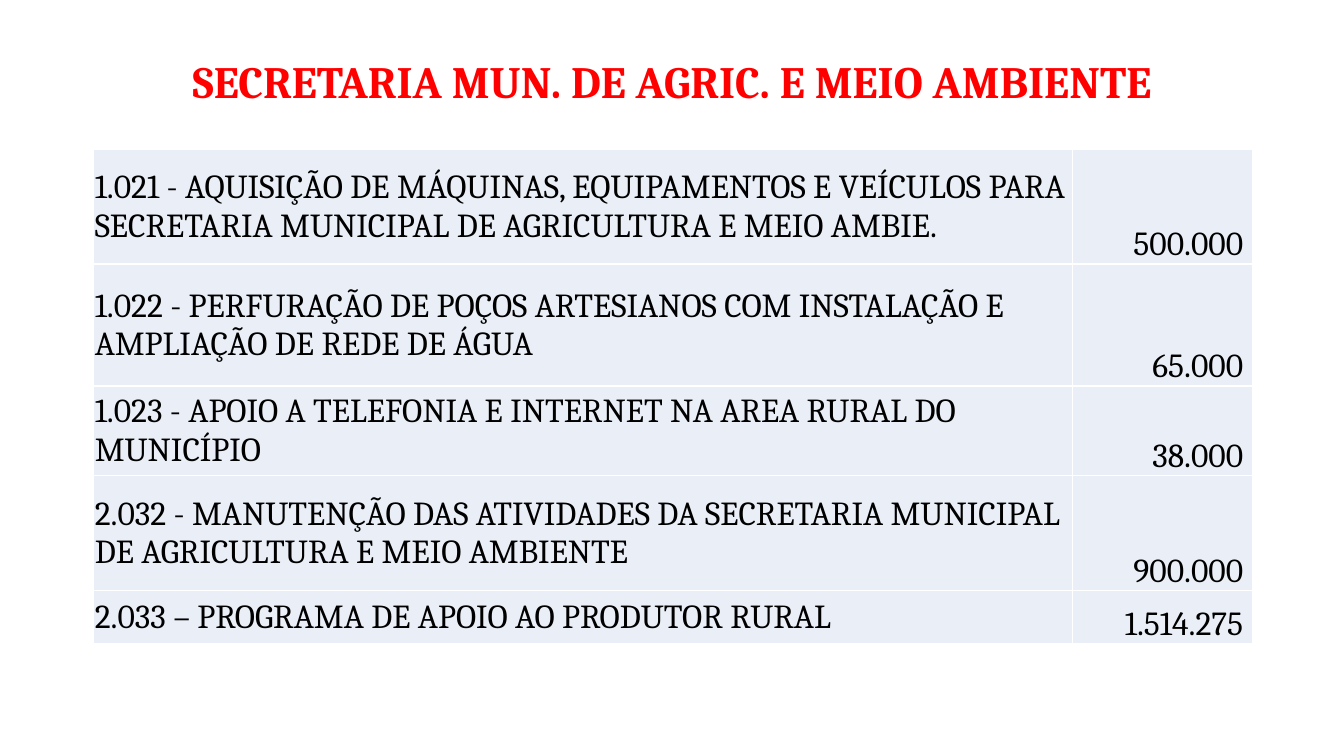
from lxml import etree
from pptx import Presentation
from pptx import util as u
from pptx.dml.color import RGBColor
from pptx.enum import text
from pptx.oxml import ns

RED = RGBColor(0xFF, 0x00, 0x00)
BLACK = RGBColor(0x00, 0x00, 0x00)
WHITE = RGBColor(0xFF, 0xFF, 0xFF)
PALE_BLUE = RGBColor(0xEA, 0xEF, 0xF7)

BUDGET_ROWS = [
    (1.14, "1.021 - AQUISIÇÃO DE MÁQUINAS, EQUIPAMENTOS E VEÍCULOS PARA "
           "SECRETARIA MUNICIPAL DE AGRICULTURA E MEIO AMBIE.", "500.000"),
    (1.21, "1.022 - PERFURAÇÃO DE POÇOS ARTESIANOS COM INSTALAÇÃO E "
           "AMPLIAÇÃO DE REDE DE ÁGUA", "65.000"),
    (0.89, "1.023 - APOIO A TELEFONIA E INTERNET NA AREA RURAL DO MUNICÍPIO",
     "38.000"),
    (1.14, "2.032 - MANUTENÇÃO DAS ATIVIDADES DA SECRETARIA MUNICIPAL DE "
           "AGRICULTURA E MEIO AMBIENTE", "900.000"),
    (0.53, "2.033 – PROGRAMA DE APOIO AO PRODUTOR RURAL", "1.514.275"),
]


def write_text(frame, words, size=24, color=BLACK, bold=False,
               align=text.PP_ALIGN.LEFT, line_spacing=None):
    paragraph = frame.paragraphs[0]
    paragraph.alignment = align
    if line_spacing:
        paragraph.line_spacing = line_spacing
    run = paragraph.add_run()
    run.text = words
    run.font.name = "Cambria"
    run.font.size = u.Pt(size)
    run.font.bold = bold
    run.font.color.rgb = color


class BudgetSlide:
    def __init__(self, presentation):
        self.border_color = WHITE
        self.border_width = u.Pt(1)
        self.cell_fill = PALE_BLUE
        self.slide = presentation.slides.add_slide(presentation.slide_layouts[5])

    def title(self, words, left, top, width, height):
        shape = self.slide.shapes.title
        shape.left, shape.top = u.Inches(left), u.Inches(top)
        shape.width, shape.height = u.Inches(width), u.Inches(height)
        frame = shape.text_frame
        frame.word_wrap = True
        frame.auto_size = text.MSO_AUTO_SIZE.NONE
        frame.vertical_anchor = text.MSO_ANCHOR.MIDDLE
        write_text(frame, words, size=32, color=RED, bold=True,
                   align=text.PP_ALIGN.CENTER, line_spacing=0.9)

    def table(self, rows, left, top, column_widths):
        heights = [row[0] for row in rows]
        table = self.slide.shapes.add_table(
            len(rows), len(column_widths), u.Inches(left), u.Inches(top),
            u.Inches(sum(column_widths)), u.Inches(sum(heights))).table
        table.first_row = table.horz_banding = False
        for column, width in zip(table.columns, column_widths):
            column.width = u.Inches(width)
        for index, (height, item, amount) in enumerate(rows):
            table.rows[index].height = u.Inches(height)
            self.cell(table.cell(index, 0), item)
            self.cell(table.cell(index, 1), amount, anchor=text.MSO_ANCHOR.BOTTOM,
                      align=text.PP_ALIGN.RIGHT, right=0.09)

    def cell(self, cell, words, anchor=text.MSO_ANCHOR.MIDDLE,
             align=text.PP_ALIGN.LEFT, right=0.01):
        cell.margin_left = cell.margin_top = u.Inches(0.01)
        cell.margin_right, cell.margin_bottom = u.Inches(right), 0
        cell.vertical_anchor = anchor
        self.borders(cell)
        cell.fill.solid()
        cell.fill.fore_color.rgb = self.cell_fill
        write_text(cell.text_frame, words, align=align)

    def borders(self, cell):
        properties = cell._tc.get_or_add_tcPr()
        for side in ("a:lnL", "a:lnR", "a:lnT", "a:lnB"):
            line = etree.SubElement(properties, ns.qn(side), w=str(self.border_width))
            fill = etree.SubElement(line, ns.qn("a:solidFill"))
            etree.SubElement(fill, ns.qn("a:srgbClr"), val=str(self.border_color))


def main():
    presentation = Presentation()
    presentation.slide_width = u.Inches(13.33)
    presentation.slide_height = u.Inches(7.5)
    budget = BudgetSlide(presentation)

    # Heading
    budget.title("SECRETARIA MUN. DE AGRIC. E MEIO AMBIENTE", 0.92, 0.4, 11.5, 0.86)

    # Budget items and amounts
    budget.table(BUDGET_ROWS, 0.93, 1.48, column_widths=(9.71, 1.78))

    presentation.save("out.pptx")


if __name__ == "__main__":
    main()
